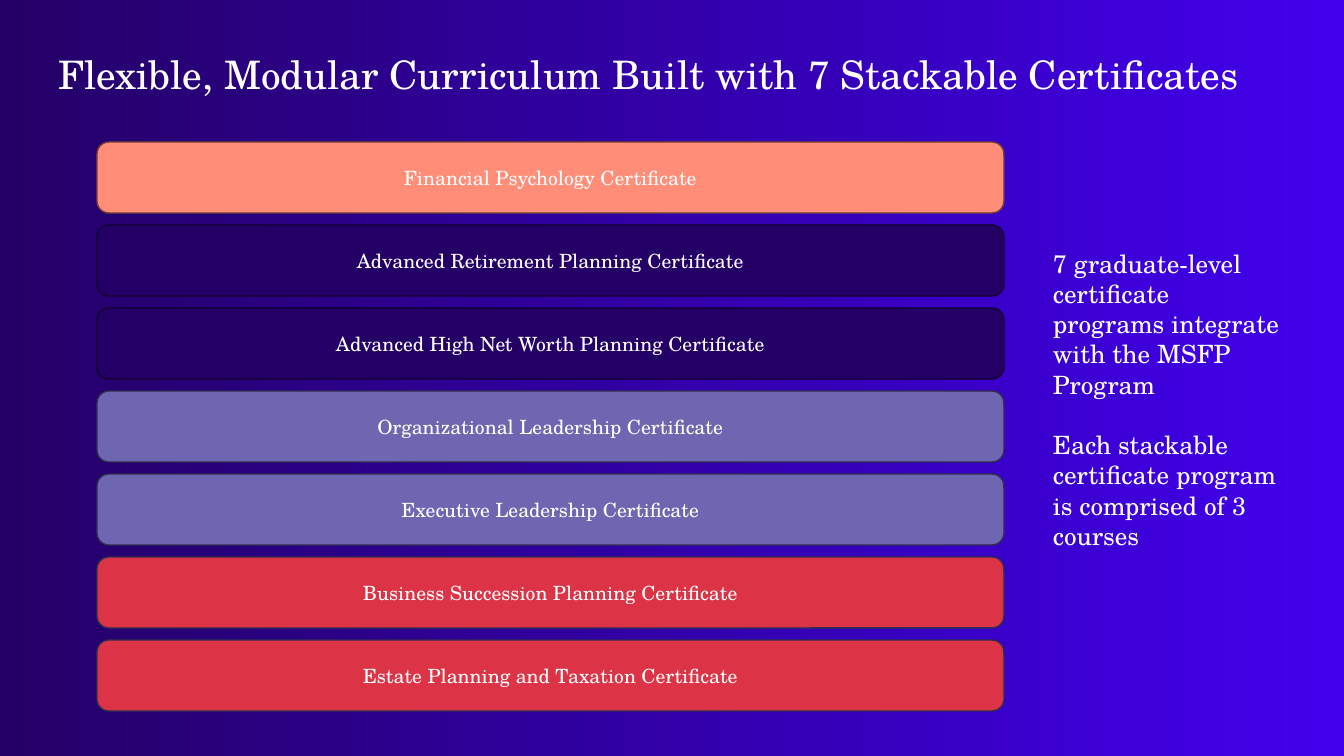
from pptx import Presentation
from pptx import util as u
from pptx.dml.color import RGBColor
from pptx.enum import shapes, text

WIDTH, HEIGHT = 1344, 756
PX = u.Inches(13.3333) / WIDTH

SALMON = ("FF8D78", "703E35")
NAVY = ("240066", "10002D")
LAVENDER = ("6F66B1", "312D4E")
RED = ("DC3346", "312D4E")

CERTIFICATES = [
    ("Financial Psychology", SALMON),
    ("Advanced Retirement Planning", NAVY),
    ("Advanced High Net Worth Planning", NAVY),
    ("Organizational Leadership", LAVENDER),
    ("Executive Leadership", LAVENDER),
    ("Business Succession Planning", RED),
    ("Estate Planning and Taxation", RED),
]
BAR_LEFT, BAR_TOP, BAR_WIDTH, BAR_HEIGHT, BAR_PITCH = 97, 142, 907, 71, 83

SIDE_NOTES = [
    "7 graduate-level certificate programs integrate with the MSFP Program",
    "Each stackable certificate program is comprised of 3 courses",
]


def px(length):
    return u.Emu(round(length * PX))


def colour(value):
    return RGBColor.from_string(value)


def set_values(target, values):
    for name, value in values.items():
        setattr(target, name, value)


class CertificatePage:
    font = "TeX Gyre Schola"
    ink = "FFFFFF"

    def __init__(self, deck):
        self.page = deck.slides.add_slide(deck.slide_layouts[5])

    def background(self, right, left):
        fill = self.page.background.fill
        fill.gradient()
        fill.gradient_angle = 180
        for stop, value in zip(fill.gradient_stops, (right, left)):
            stop.color.rgb = colour(value)

    def put_text(self, box, lines, size, align=text.PP_ALIGN.LEFT, gap=0, **frame_format):
        """Fill the box with one paragraph per line, gap points apart."""
        frame = box.text_frame
        set_values(frame, {"word_wrap": True, "auto_size": text.MSO_AUTO_SIZE.NONE,
                           **frame_format})
        for index, line in enumerate(lines):
            para = frame.add_paragraph() if index else frame.paragraphs[0]
            set_values(para, {"alignment": align, "space_before": u.Pt(gap if index else 0)})
            span = para.add_run()
            span.text = line
            set_values(span.font, {"name": self.font, "size": u.Pt(size)})
            span.font.color.rgb = colour(self.ink)

    def title(self, words, left, top, width, height):
        box = self.page.shapes.title
        set_values(box, {"left": px(left), "top": px(top),
                         "width": px(width), "height": px(height)})
        self.put_text(box, [words], 28, vertical_anchor=text.MSO_ANCHOR.TOP)

    def bar(self, words, fill, line, left, top, width, height):
        box = self.page.shapes.add_shape(
            shapes.MSO_SHAPE.ROUNDED_RECTANGLE, px(left), px(top), px(width), px(height))
        box.shadow.inherit = False
        box.fill.solid()
        box.fill.fore_color.rgb = colour(fill)
        box.line.color.rgb = colour(line)
        box.line.width = u.Pt(1)
        self.put_text(box, [words], 14, text.PP_ALIGN.CENTER,
                      vertical_anchor=text.MSO_ANCHOR.MIDDLE)

    def notes(self, lines, left, top, width, height):
        box = self.page.shapes.add_textbox(px(left), px(top), px(width), px(height))
        self.put_text(box, lines, 18, gap=21.6, margin_top=px(35))


def main():
    deck = Presentation()
    set_values(deck, {"slide_width": px(WIDTH), "slide_height": px(HEIGHT)})
    page = CertificatePage(deck)
    page.background(right="4100EC", left="240066")
    page.title("Flexible, Modular Curriculum Built with 7 Stackable Certificates", 48, 45, 1215, 57)
    for row, (subject, (fill, line)) in enumerate(CERTIFICATES):
        page.bar(f"{subject} Certificate", fill, line,
                 BAR_LEFT, BAR_TOP + row * BAR_PITCH, BAR_WIDTH, BAR_HEIGHT)
    page.notes(SIDE_NOTES, 1043, 213, 247, 346)
    deck.save("out.pptx")


if __name__ == "__main__":
    main()
